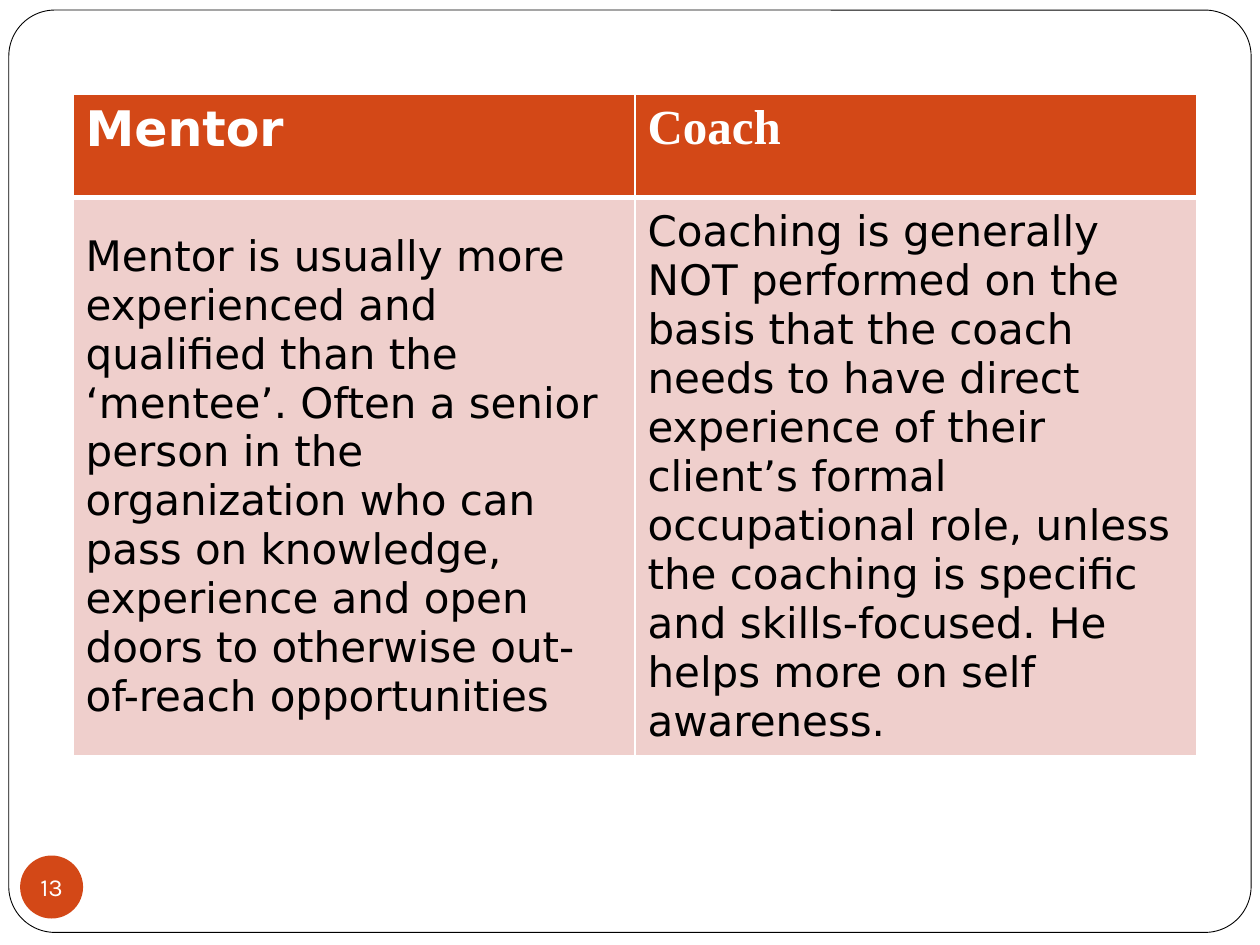
"""Build a slide comparing a mentor with a coach in a two-column table."""
from lxml import etree
from pptx import Presentation, util as u
from pptx.dml.color import RGBColor
from pptx.enum import shapes, text
from pptx.oxml.ns import qn

HUES = {"white": "FFFFFF", "black": "000000", "rust": "D34817", "pink": "EFCFCC"}
SANS = "DejaVu Sans"
HEADS = [("Mentor", SANS), ("Coach", "Times New Roman")]
BODIES = [
    ("Mentor is usually more experienced and qualified than the ‘mentee’. "
     "Often a senior person in the organization who can pass on knowledge, "
     "experience and open doors to otherwise out-of-reach opportunities", SANS),
    ("Coaching is generally NOT performed on the basis that the coach needs to "
     "have direct experience of their client’s formal occupational role, unless "
     "the coaching is specific and skills-focused. He helps more on self "
     "awareness.", SANS),
]
ROWS = [
    dict(cells=HEADS, high=0.82, fill="rust", top=1, base=3,
         look=dict(size=28, hue="white", bold=True, anchor="TOP")),
    dict(cells=BODIES, high=4.43, fill="pink", top=3, base=1,
         look=dict(size=24, hue="black", anchor="MIDDLE")),
]
PAGE = "13"
WIDE, HIGH = 10, 7.5
LEFT, TOP, SPAN = 0.58, 0.75, 8.92
EDGE, DOT = 0.07, 0.5


def tint(name):
    return RGBColor.from_string(HUES[name])


def paint(fill, name):
    fill.solid()
    fill.fore_color.rgb = tint(name)


def write(frame, words, font=SANS, size=24, hue="black", bold=False,
          anchor="MIDDLE", align="LEFT"):
    frame.vertical_anchor = getattr(text.MSO_ANCHOR, anchor)
    para = frame.paragraphs[0]
    para.alignment = getattr(text.PP_ALIGN, align)
    run = para.add_run()
    run.text = words
    run.font.name, run.font.size, run.font.bold = font, u.Pt(size), bold
    run.font.color.rgb = tint(hue)


def draw(slide, kind, box, fill):
    item = slide.shapes.add_shape(kind, *map(u.Inches, box))
    item.shadow.inherit = False
    paint(item.fill, fill)
    item.line.fill.background()
    return item


def rule(cell, **sides):
    props = cell._tc.get_or_add_tcPr()
    for side, size in sides.items():
        line = etree.SubElement(props, qn("a:ln" + side), w=str(u.Pt(size)))
        fill = etree.SubElement(line, qn("a:solidFill"))
        etree.SubElement(fill, qn("a:srgbClr"), val=HUES["white"])


def fill_table(slide):
    total = sum(row["high"] for row in ROWS)
    box = map(u.Inches, (LEFT, TOP, SPAN, total))
    table = slide.shapes.add_table(len(ROWS), len(HEADS), *box).table
    for col in table.columns:
        col.width = u.Inches(SPAN / len(HEADS))
    for r, row in enumerate(ROWS):
        table.rows[r].height = u.Inches(row["high"])
        for c, (words, font) in enumerate(row["cells"]):
            cell = table.cell(r, c)
            rule(cell, L=1, R=1, T=row["top"], B=row["base"])
            paint(cell.fill, row["fill"])
            cell.vertical_anchor = getattr(text.MSO_ANCHOR, row["look"]["anchor"])
            write(cell.text_frame, words, font, **row["look"])


def main():
    deck = Presentation()
    deck.slide_width, deck.slide_height = u.Inches(WIDE), u.Inches(HIGH)
    slide = deck.slides.add_slide(deck.slide_layouts[6])
    kinds = shapes.MSO_SHAPE

    box = (EDGE, 0.08, WIDE - 2 * EDGE, 7.32)
    frame = draw(slide, kinds.ROUNDED_RECTANGLE, box, "white")
    frame.adjustments[0] = 0.05
    frame.line.color.rgb = tint("black")
    frame.line.width = u.Pt(0.5)

    badge = draw(slide, kinds.OVAL, (0.16, 6.79, DOT, DOT), "rust")
    label = badge.text_frame
    label.word_wrap = False
    label.margin_left = label.margin_right = 0
    label.margin_top = label.margin_bottom = 0
    write(label, PAGE, "Karla", 14, "white", align="CENTER")

    fill_table(slide)
    deck.save("out.pptx")


if __name__ == "__main__":
    main()
